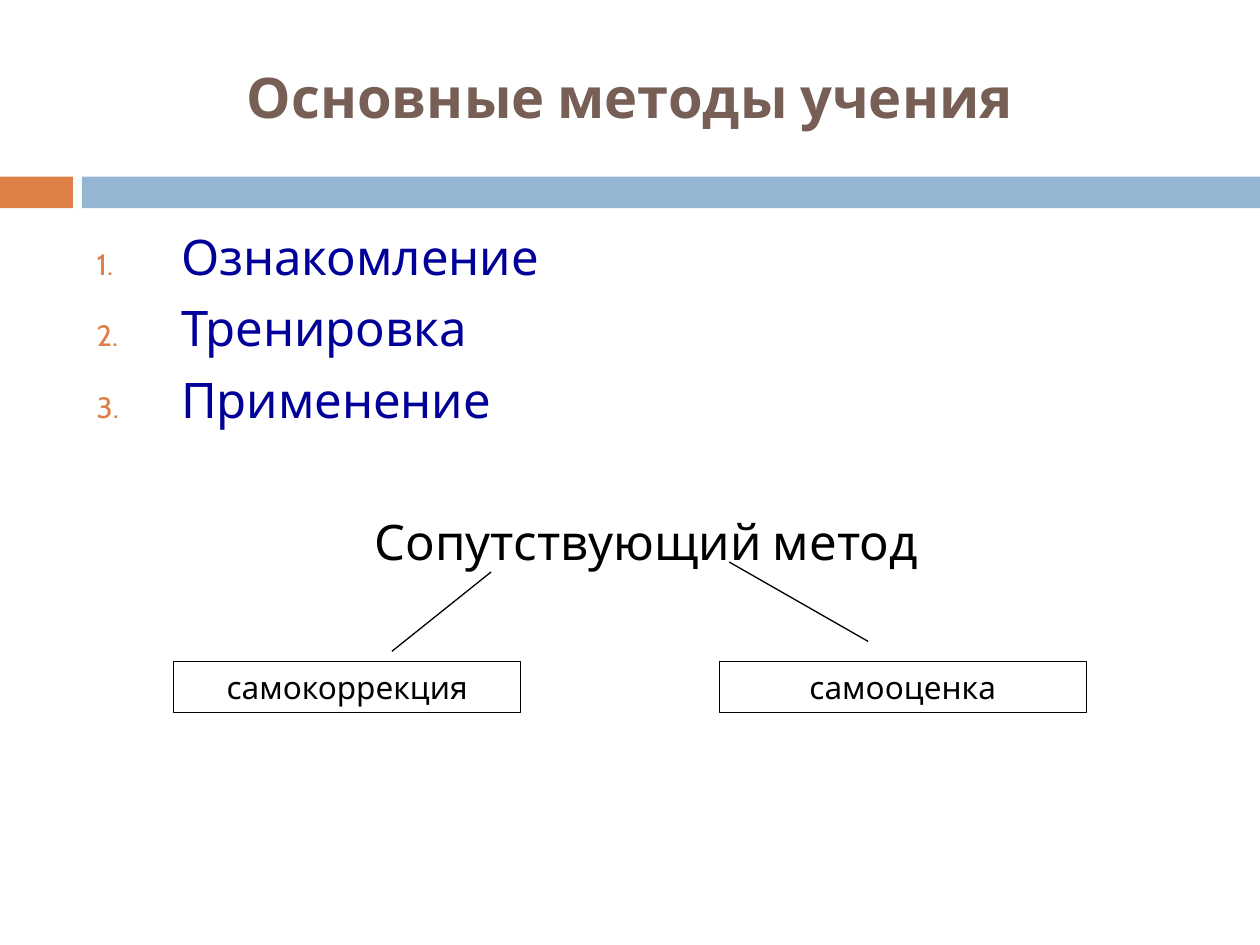
from dataclasses import dataclass

from lxml import etree
from pptx import Presentation
from pptx import util as u
from pptx.dml.color import RGBColor
from pptx.enum import shapes, text
from pptx.oxml import ns


@dataclass(frozen=True)
class Theme:
    font: str = "Cabin"
    title: str = "775F55"
    accent: str = "DD8047"
    band: str = "94B6D2"
    method: str = "000099"
    ink: str = "000000"
    title_size: int = 32
    body_size: int = 28
    label_size: int = 18
    line_width: float = 0.75


theme = Theme()


def write(para, words, size, color, bold=False, **layout):
    for name, value in layout.items():
        setattr(para, name, value)
    span = para.add_run()
    span.text = words
    formats = {"name": theme.font, "size": u.Pt(size), "bold": bold}
    for name, value in formats.items():
        setattr(span.font, name, value)
    span.font.color.rgb = RGBColor.from_string(color)


def add_bullet_part(para, tag, **values):
    return etree.SubElement(para._p.get_or_add_pPr(), ns.qn(tag), values)


deck = Presentation()
deck.slide_width, deck.slide_height = u.Cm(25.4), u.Cm(19.05)
page = deck.slides.add_slide(deck.slide_layouts[6])

for left, width, color in [(0, 1.47, theme.accent), (1.65, 23.75, theme.band)]:
    bar = page.shapes.add_shape(
        shapes.MSO_SHAPE.RECTANGLE, u.Cm(left), u.Cm(3.56), u.Cm(width), u.Cm(0.64))
    bar.shadow.inherit = False
    bar.fill.solid()
    bar.fill.fore_color.rgb = RGBColor.from_string(color)
    bar.line.fill.background()

title = page.shapes.add_textbox(u.Cm(1.27), u.Cm(0.76), u.Cm(22.86), u.Cm(2.36))
title.text_frame.word_wrap = True
title.text_frame.vertical_anchor = text.MSO_ANCHOR.MIDDLE
write(title.text_frame.paragraphs[0], "Основные методы учения", theme.title_size,
      theme.title, bold=True, alignment=text.PP_ALIGN.CENTER)

body = page.shapes.add_textbox(u.Cm(1.7), u.Cm(4.45), u.Cm(22.66), u.Cm(12.5))
frame = body.text_frame
frame.word_wrap = True
for index, method in enumerate(["Ознакомление", "Тренировка", "Применение"]):
    para = frame.add_paragraph() if index else frame.paragraphs[0]
    write(para, method, theme.body_size, theme.method, space_before=u.Pt(7))
    indent = u.Cm(1.7)
    for name, value in {"marL": indent, "indent": -indent}.items():
        para._p.get_or_add_pPr().set(name, str(int(value)))
    bullet_color = add_bullet_part(para, "a:buClr")
    etree.SubElement(bullet_color, ns.qn("a:srgbClr"), val=theme.accent)
    add_bullet_part(para, "a:buSzPct", val="60000")
    add_bullet_part(para, "a:buFont", typeface=theme.font)
    add_bullet_part(para, "a:buAutoNum", type="arabicPeriod")
write(frame.add_paragraph(), "Сопутствующий метод", theme.body_size, theme.ink,
      alignment=text.PP_ALIGN.CENTER, space_before=u.Pt(47.6))

for label, left, width in [("самокоррекция", 3.5, 7), ("самооценка", 14.5, 7.4)]:
    box = page.shapes.add_shape(
        shapes.MSO_SHAPE.RECTANGLE, u.Cm(left), u.Cm(13.33), u.Cm(width), u.Cm(1.04))
    box.shadow.inherit = False
    box.fill.background()
    box.line.color.rgb = RGBColor.from_string(theme.ink)
    box.line.width = u.Pt(theme.line_width)
    write(box.text_frame.paragraphs[0], label, theme.label_size, theme.ink,
          alignment=text.PP_ALIGN.CENTER)

for ends in [(9.9, 11.53, 7.9, 13.13), (14.7, 11.33, 17.5, 12.93)]:
    branch = page.shapes.add_connector(
        shapes.MSO_CONNECTOR.STRAIGHT, *[u.Cm(value) for value in ends])
    branch.line.color.rgb = RGBColor.from_string(theme.ink)
    branch.line.width = u.Pt(theme.line_width)
    etree.SubElement(branch._element.spPr, ns.qn("a:effectLst"))

deck.save("out.pptx")
